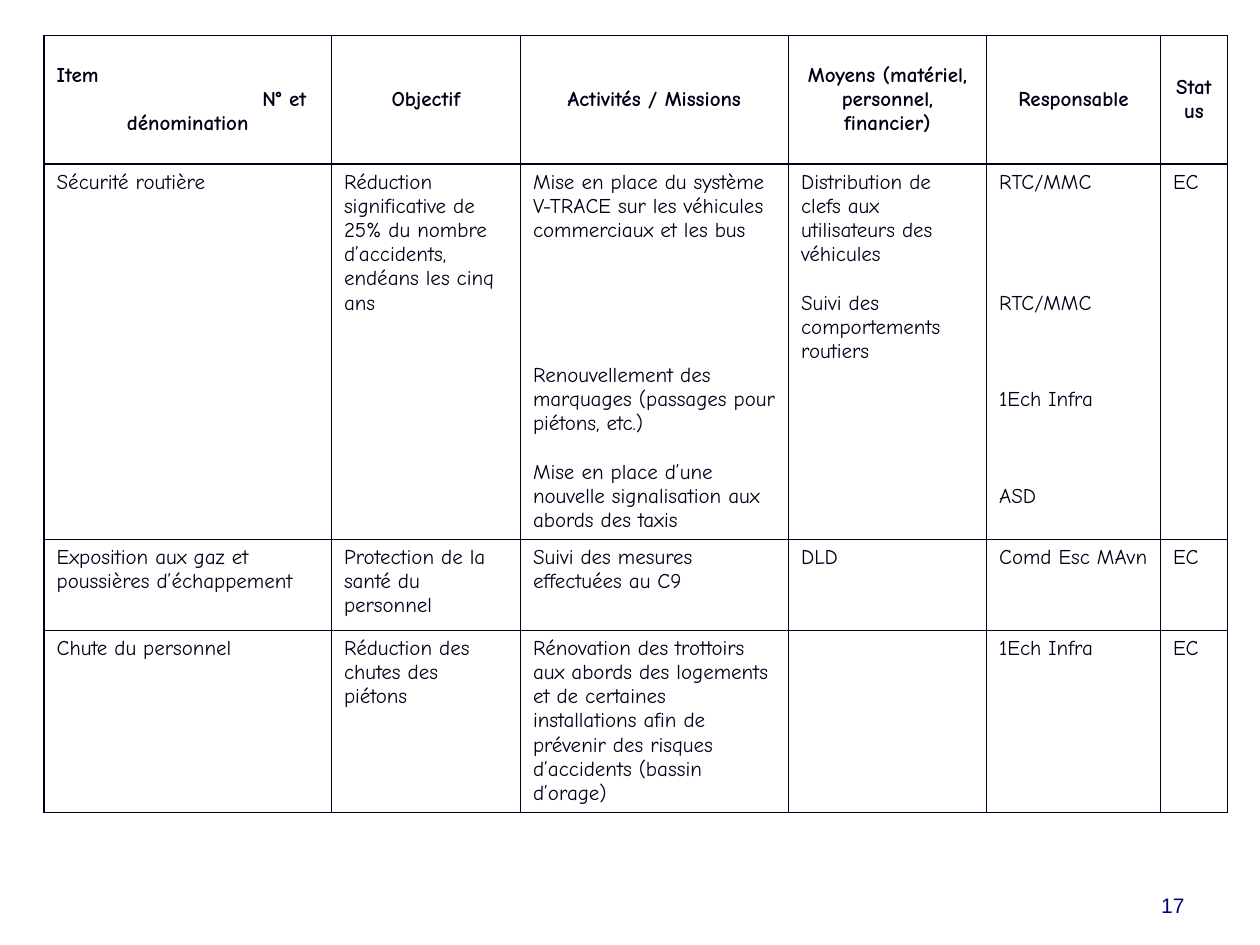
"""Build the safety action plan slide: one bordered table and a page number."""
from lxml import etree
from pptx import Presentation
from pptx import util as u
from pptx.dml import color
from pptx.enum import text
from pptx.oxml import ns

INK, NAVY = "000018", "000080"
LINE = 13.8
LEFT, CENTER, RIGHT = text.PP_ALIGN.LEFT, text.PP_ALIGN.CENTER, text.PP_ALIGN.RIGHT


def format_paragraph(paragraph, hex_color, **values):
    paragraph.font.color.rgb = color.RGBColor.from_string(hex_color)
    for name, value in values.items():
        setattr(paragraph.font, name, value)


def add_border(cell, position, side):
    line = etree.Element(ns.qn(f"a:ln{side}"), w=str(u.Pt(1)))
    fill = etree.SubElement(line, ns.qn("a:solidFill"))
    etree.SubElement(fill, ns.qn("a:srgbClr"), val=INK)
    cell._tc.get_or_add_tcPr().insert(position, line)


presentation = Presentation()
presentation.slide_width, presentation.slide_height = u.Pt(720), u.Pt(540)
slide = presentation.slides.add_slide(presentation.slide_layouts[6])

column_widths = [164.2, 108, 153.2, 113.2, 99.4, 38.2]
row_heights = [73.4, 214.4, 52, 104]
headers = [
    [(0, "Item"), (0, "N° et"), (0, "dénomination")],
    [(0, "Objectif")],
    [(0, "Activités / Missions")],
    [(0, "Moyens (matériel, personnel, financier)")],
    [(0, "Responsable")],
    [(0, "Status")],
]
road_safety = [
    [(0, "Sécurité routière")],
    [(0, "Réduction significative de 25% du nombre d’accidents, endéans les cinq ans")],
    [
        (0, "Mise en place du système V-TRACE sur les véhicules commerciaux et les bus"),
        (5, "Renouvellement des marquages (passages pour piétons, etc.)"),
        (1, "Mise en place d’une nouvelle signalisation aux abords des taxis"),
    ],
    [
        (0, "Distribution de clefs aux utilisateurs des véhicules"),
        (1, "Suivi des comportements routiers"),
    ],
    [(0, "RTC/MMC"), (4, "RTC/MMC"), (3, "1Ech Infra"), (3, "ASD")],
    [(0, "EC")],
]
exhaust = [
    [(0, "Exposition aux gaz et poussières d’échappement")],
    [(0, "Protection de la santé du personnel")],
    [(0, "Suivi des mesures effectuées au C9")],
    [(0, "DLD")],
    [(0, "Comd Esc MAvn")],
    [(0, "EC")],
]
falls = [
    [(0, "Chute du personnel")],
    [(0, "Réduction des chutes des piétons")],
    [(0, "Rénovation des trottoirs aux abords des logements et de certaines "
         "installations afin de prévenir des risques d’accidents (bassin d’orage)")],
    [],
    [(0, "1Ech Infra")],
    [(0, "EC")],
]
rows = [headers, road_safety, exhaust, falls]

frame = slide.shapes.add_table(
    len(rows), len(column_widths), u.Pt(25.2), u.Pt(20.4),
    u.Pt(sum(column_widths)), u.Pt(sum(row_heights)))
table = frame.table
table.horz_banding = False
for column, width in zip(table.columns, column_widths):
    column.width = u.Pt(width)
for row, height in zip(table.rows, row_heights):
    row.height = u.Pt(height)

for row_index, row in enumerate(rows):
    is_header = row_index == 0
    for column_index, entries in enumerate(row):
        cell = table.cell(row_index, column_index)
        cell.fill.background()
        for position, side in enumerate("LRTB"):
            add_border(cell, position, side)
        cell.vertical_anchor = text.MSO_ANCHOR.MIDDLE if is_header else text.MSO_ANCHOR.TOP
        for index, (gap_lines, wording) in enumerate(entries):
            paragraphs = cell.text_frame
            paragraph = paragraphs.add_paragraph() if index else paragraphs.paragraphs[0]
            paragraph.text = wording
            paragraph.alignment = CENTER if is_header else LEFT
            if gap_lines:
                paragraph.space_before = u.Pt(gap_lines * LINE)
            format_paragraph(paragraph, INK, name="Comic Neue", size=u.Pt(12), bold=is_header)

item, number, _ = table.cell(0, 0).text_frame.paragraphs
item.alignment = number.alignment = LEFT
number._p.get_or_add_pPr().set("marL", str(u.Pt(117.5)))

page_box = slide.shapes.add_textbox(u.Pt(516.2), u.Pt(491.8), u.Pt(167.8), u.Pt(36))
page_box.text_frame.word_wrap = True
page_box.text_frame.vertical_anchor = text.MSO_ANCHOR.BOTTOM
page_number = page_box.text_frame.paragraphs[0]
page_number.text = "17"
page_number.alignment = RIGHT
format_paragraph(page_number, NAVY, name="Arial", size=u.Pt(12))

presentation.save("out.pptx")
